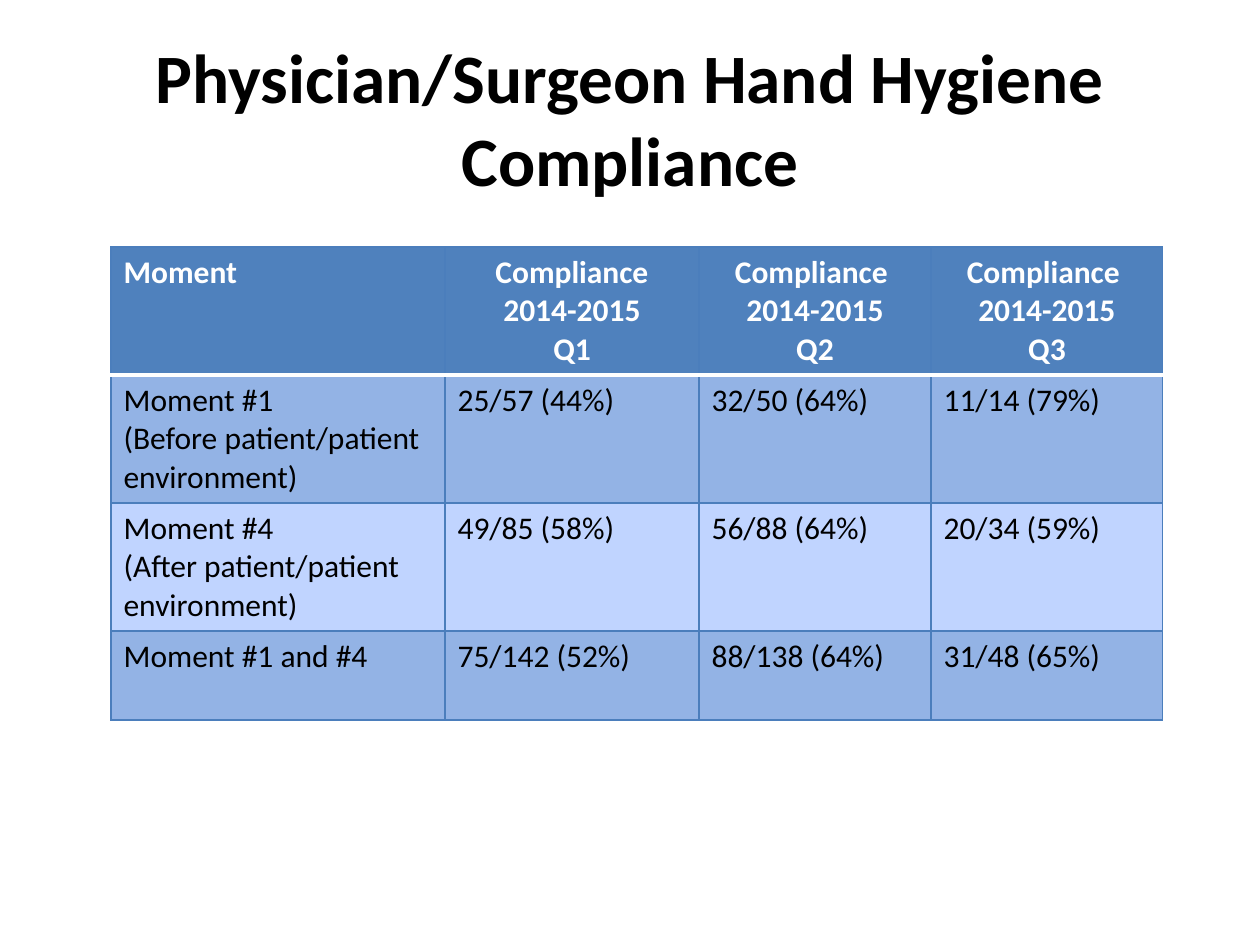
from typing import NamedTuple

from lxml import etree
from pptx import Presentation
from pptx.dml.color import RGBColor
from pptx.enum.text import MSO_ANCHOR, MSO_AUTO_SIZE, PP_ALIGN
from pptx.oxml.ns import qn
from pptx.util import Pt

LEFT, CENTER = PP_ALIGN.LEFT, PP_ALIGN.CENTER
MIDDLE, FIXED = MSO_ANCHOR.MIDDLE, MSO_AUTO_SIZE.NONE
PX = 914400 / 126

BLACK, WHITE = "000000", "FFFFFF"
HEAD, DARK, PALE, EDGE = "4F81BD", "93B3E5", "C0D4FF", "4B7EBC"


class Box(NamedTuple):
    left: int
    top: int
    width: int
    height: int


class Row(NamedTuple):
    height: int
    fill: str
    cells: list[str]


COLS = [334, 254, 232, 232]
ROWS = [
    Row(128, HEAD, ["Moment", "Compliance\n2014-2015\nQ1",
                    "Compliance \n2014-2015\nQ2", "Compliance \n2014-2015\nQ3"]),
    Row(128, DARK, ["Moment #1\n(Before patient/patient environment)",
                    "25/57 (44%)", "32/50 (64%)", "11/14 (79%)"]),
    Row(128, PALE, ["Moment #4\n(After patient/patient environment)",
                    "49/85 (58%)", "56/88 (64%)", "20/34 (59%)"]),
    Row(89, DARK, ["Moment #1 and #4",
                   "75/142 (52%)", "88/138 (64%)", "31/48 (65%)"]),
]
TITLE = Box(63, 38, 1134, 158)
GRID = Box(111, 247, sum(COLS), sum(row.height for row in ROWS))


def emu(px: int) -> int:
    return round(px * PX)


def color(code: str) -> RGBColor:
    return RGBColor.from_string(code)


def style(frame, size: float, code: str, bold: bool, align) -> None:
    look = {"name": "Calibri", "size": Pt(size), "bold": bold}
    for para in frame.paragraphs:
        para.alignment = align
        for run in para.runs:
            for key, value in look.items():
                setattr(run.font, key, value)
            run.font.color.rgb = color(code)


def border(cell, sides: dict[str, tuple[str, float]]) -> None:
    """Cell lines must come before the fill in the cell properties."""
    props = cell._tc.get_or_add_tcPr()
    for spot, (side, (code, width)) in enumerate(sides.items()):
        line = etree.Element(qn(f"a:ln{side}"), w=str(Pt(width)))
        fill = etree.SubElement(line, qn("a:solidFill"))
        etree.SubElement(fill, qn("a:srgbClr"), val=code)
        props.insert(spot, line)


def add_title(slide, box: Box, text: str) -> None:
    title = slide.shapes.title
    for key, value in box._asdict().items():
        setattr(title, key, emu(value))
    frame = title.text_frame
    frame.text = text
    look = {"word_wrap": True, "auto_size": FIXED, "vertical_anchor": MIDDLE}
    for key, value in look.items():
        setattr(frame, key, value)
    style(frame, 39.6, BLACK, True, CENTER)


def add_grid(slide, box: Box) -> None:
    table = slide.shapes.add_table(len(ROWS), len(COLS), *map(emu, box)).table
    for col, width in zip(table.columns, COLS):
        col.width = emu(width)
    for r, row in enumerate(ROWS):
        table.rows[r].height = emu(row.height)
        head = r == 0
        sides = dict.fromkeys("LRTB", (EDGE, 0.75))
        # White rule between the header and the body
        if head:
            sides["B"] = (WHITE, 2)
        elif r == 1:
            sides["T"] = (WHITE, 2)
        for c, text in enumerate(row.cells):
            cell = table.cell(r, c)
            cell.text_frame.text = text
            cell.fill.solid()
            cell.fill.fore_color.rgb = color(row.fill)
            border(cell, sides)
            style(cell.text_frame, 18, WHITE if head else BLACK, head,
                  CENTER if head and c else LEFT)


def main() -> None:
    deck = Presentation()
    deck.slide_width, deck.slide_height = emu(1260), emu(945)
    slide = deck.slides.add_slide(deck.slide_layouts[5])
    add_title(slide, TITLE, "Physician/Surgeon Hand Hygiene Compliance")
    add_grid(slide, GRID)
    deck.save("out.pptx")


if __name__ == "__main__":
    main()
